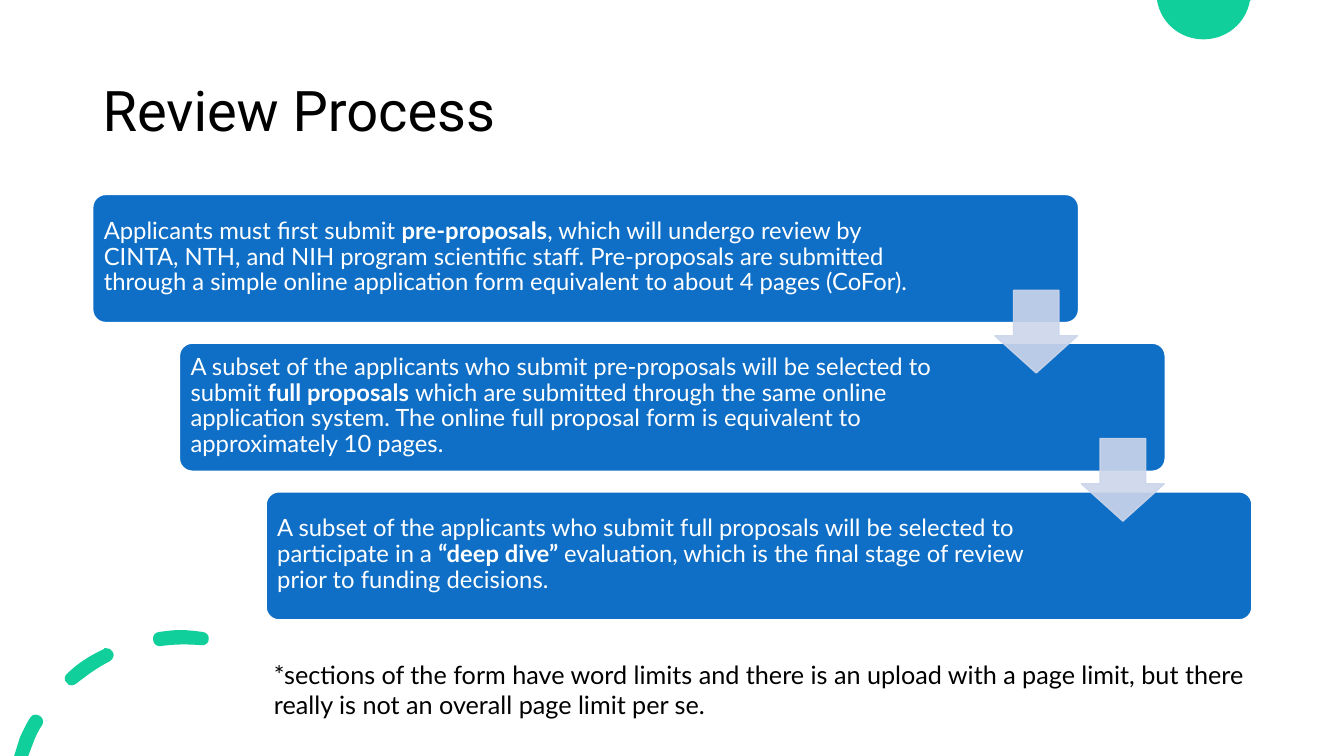
from lxml import etree
from pptx import Presentation
from pptx import util as u
from pptx.dml.color import RGBColor
from pptx.enum import shapes, text
from pptx.oxml import ns

WHITE = RGBColor(0xFF, 0xFF, 0xFF)
BLACK = RGBColor(0x00, 0x00, 0x00)
GREEN = RGBColor(0x10, 0xCF, 0x9B)
BLUE = RGBColor(0x0F, 0x6F, 0xC6)
PALE_BLUE = RGBColor(0xCC, 0xD5, 0xEA)

# Each outline is a start point, then lines (2 numbers) and curves (6 numbers)
CIRCLE = [
    [(11.48, 0), (12.41, 0), (12.4, 0.01),
     (12.36, 0.23, 12.17, 0.39, 11.94, 0.39),
     (11.71, 0.39, 11.52, 0.23, 11.48, 0.01)],
]
DASHES = [
    [(0.36, 7.09), (0.34, 7.08, 0.31, 7.1, 0.3, 7.12),
     (0.26, 7.18, 0.23, 7.25, 0.2, 7.31), (0.14, 7.5), (0.28, 7.5), (0.33, 7.37),
     (0.35, 7.31, 0.38, 7.25, 0.42, 7.19), (0.44, 7.16, 0.42, 7.11, 0.39, 7.1),
     (0.38, 7.09, 0.37, 7.09, 0.36, 7.09)],
    [(1.05, 6.43), (1.04, 6.43, 1.03, 6.43, 1.03, 6.44),
     (0.9, 6.5, 0.77, 6.58, 0.67, 6.68), (0.64, 6.7, 0.63, 6.75, 0.66, 6.77),
     (0.67, 6.79, 0.69, 6.8, 0.71, 6.8), (0.73, 6.8, 0.74, 6.79, 0.76, 6.78),
     (0.86, 6.7, 0.97, 6.62, 1.09, 6.56), (1.12, 6.54, 1.14, 6.5, 1.12, 6.47),
     (1.11, 6.44, 1.08, 6.43, 1.05, 6.43)],
    [(1.79, 6.25), (1.72, 6.25, 1.65, 6.26, 1.58, 6.27),
     (1.54, 6.27, 1.51, 6.31, 1.52, 6.35), (1.52, 6.38, 1.55, 6.41, 1.58, 6.41),
     (1.59, 6.41, 1.59, 6.41, 1.59, 6.41), (1.73, 6.39, 1.86, 6.39, 1.99, 6.4),
     (2.03, 6.41, 2.07, 6.38, 2.07, 6.35), (2.08, 6.31, 2.05, 6.27, 2.01, 6.27),
     (1.94, 6.26, 1.86, 6.25, 1.79, 6.25)],
]

# Text width, then runs of (wording, bold)
STEPS = [
    (8.41, [("Applicants must first submit ", False), ("pre-proposals", True),
            (", which will undergo review by CINTA, NTH, and NIH program scientific "
             "staff. Pre-proposals are submitted through a simple online application "
             "form equivalent to about 4 pages (CoFor).", False)]),
    (8.02, [("A subset of the applicants who submit pre-proposals will be selected "
             "to submit ", False), ("full proposals ", True),
            ("which are submitted through the same online application system. The "
             "online full proposal form is equivalent to approximately 10 pages.",
             False)]),
    (8.02, [("A subset of the applicants who submit full proposals will be selected "
             "to participate in a ", False), ("“deep dive” ", True),
            ("evaluation, which is the final stage of review prior to funding "
             "decisions.", False)]),
]
NOTE = ("*sections of the form have word limits and there is an upload with a page "
        "limit, but there really is not an overall page limit per se.")


def write_text(frame, runs, *, size, font="Lato", color=BLACK, spacing=1.0):
    paragraph = frame.paragraphs[0]
    paragraph.line_spacing = spacing
    for wording, bold in runs:
        run = paragraph.add_run()
        run.text = wording
        run.font.name = font
        run.font.size = u.Pt(size)
        run.font.bold = bold
        run.font.color.rgb = color


def part_points(part):
    """Split a line or curve into its points in EMU."""
    return [(u.Inches(x), u.Inches(y)) for x, y in zip(part[::2], part[1::2])]


def bend_curves(shape, outlines):
    """Join the three segments of each curve into one Bézier segment."""
    segments = iter(list(shape._element.spPr.iter(ns.qn("a:lnTo"))))
    for outline in outlines:
        for part in outline[1:]:
            group = [next(segments) for _ in part[::2]]
            if len(group) == 3:
                curve = etree.Element(ns.qn("a:cubicBezTo"))
                group[0].addprevious(curve)
                for segment in group:
                    curve.append(segment[0])
                    segment.getparent().remove(segment)


class SlideBuilder:
    def __init__(self, slide):
        self.slide = slide

    def outline(self, outlines, color):
        start = part_points(outlines[0][0])[0]
        builder = self.slide.shapes.build_freeform(*start)
        for index, (first, *parts) in enumerate(outlines):
            if index:
                builder.move_to(*part_points(first)[0])
            points = [point for part in parts for point in part_points(part)]
            builder.add_line_segments(points, close=True)
        shape = builder.convert_to_shape()
        bend_curves(shape, outlines)
        shape.shadow.inherit = False
        shape.fill.solid()
        shape.fill.fore_color.rgb = color
        shape.line.fill.background()

    def preset(self, kind, box, fill, line, adjustments, opacity=None):
        shape = self.slide.shapes.add_shape(kind, *map(u.Inches, box))
        shape.shadow.inherit = False
        for index, value in enumerate(adjustments):
            shape.adjustments[index] = value
        shape.fill.solid()
        shape.fill.fore_color.rgb = fill
        shape.line.color.rgb = line
        shape.line.width = u.Pt(1)
        if opacity is not None:
            for color in shape._element.spPr.iter(ns.qn("a:srgbClr")):
                alpha = etree.SubElement(color, ns.qn("a:alpha"))
                alpha.set("val", str(opacity * 1000))

    def text_box(self, box, runs, anchor=text.MSO_ANCHOR.TOP, inset=None, **style):
        frame = self.slide.shapes.add_textbox(*map(u.Inches, box)).text_frame
        frame.word_wrap = True
        frame.vertical_anchor = anchor
        if inset is not None:
            frame.margin_left = frame.margin_right = u.Inches(inset)
            frame.margin_top = frame.margin_bottom = u.Inches(inset)
        write_text(frame, runs, **style)


def main():
    presentation = Presentation()
    presentation.slide_width = u.Inches(40 / 3)
    presentation.slide_height = u.Inches(7.5)
    slide = presentation.slides.add_slide(presentation.slide_layouts[6])
    builder = SlideBuilder(slide)
    middle = text.MSO_ANCHOR.MIDDLE

    # Corner decorations
    builder.outline(CIRCLE, GREEN)
    builder.outline(DASHES, GREEN)

    # Title
    builder.text_box((0.92, 0.4, 11.5, 1.45), [("Review Process", False)], middle,
                     size=40, font="Roboto", spacing=0.9)

    # Staircase of review steps
    shift = 0.86
    drop = (4.88 - 1.93) / 2
    for index, (width, runs) in enumerate(STEPS):
        left, top = 0.92 + index * shift, 1.93 + index * drop
        builder.preset(shapes.MSO_SHAPE.ROUNDED_RECTANGLE, (left, top, 9.78, 1.27),
                       BLUE, WHITE, [0.1])
        builder.text_box((left + 0.04, top + 0.03, width, 1.19), runs, middle, 0.07,
                         size=17, color=WHITE, spacing=0.9)

    # Arrows between steps
    for index in range(len(STEPS) - 1):
        builder.preset(shapes.MSO_SHAPE.DOWN_ARROW,
                       (9.87 + index * shift, 2.88 + index * 1.47, 0.82, 0.82),
                       PALE_BLUE, PALE_BLUE, [0.55, 0.45], opacity=90)

    # Footnote
    builder.text_box((2.62, 6.49, 10.16, 0.71), [(NOTE, False)], size=18)

    presentation.save("out.pptx")


if __name__ == "__main__":
    main()
